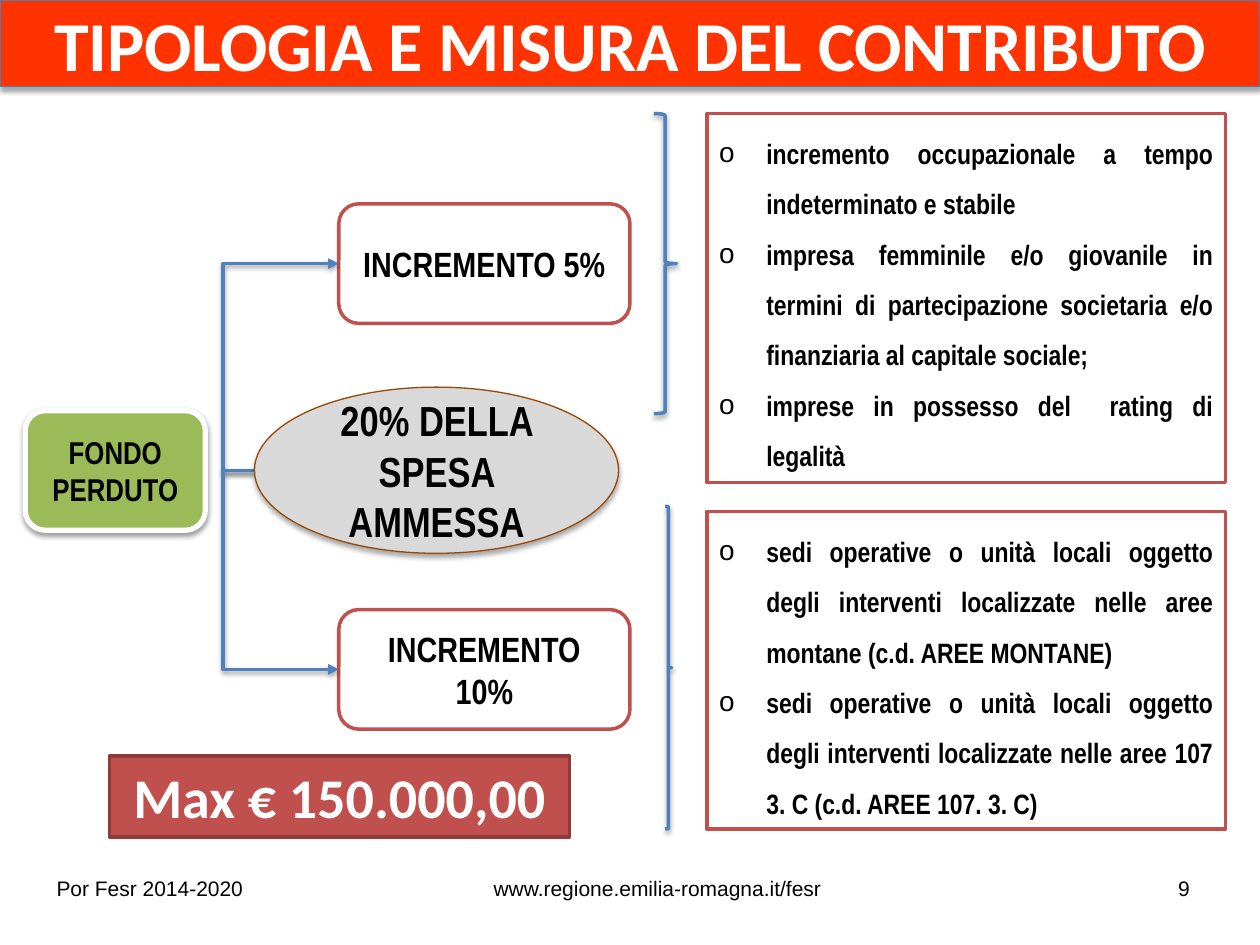
import pptx
import pptx.dml.color
import pptx.enum.shapes
import pptx.enum.text
import pptx.oxml.ns
import pptx.util
from lxml import etree

Cm = pptx.util.Cm
Pt = pptx.util.Pt
SHAPE = pptx.enum.shapes.MSO_SHAPE
ALIGN = pptx.enum.text.PP_ALIGN
ANCHOR = pptx.enum.text.MSO_ANCHOR
qn = pptx.oxml.ns.qn

COLOURS = {
    "banner": "FF3300", "banner_edge": "4B7EBC", "white": "FFFFFF",
    "black": "000000", "green": "9BBB59", "red": "C0504D",
    "dark_red": "8E3B39", "blue": "4F81BD", "grey": "D9D9D9",
    "brown": "984807",
}
INCREASES = ["INCREMENTO 5%", "INCREMENTO 10%"]
GROWTH_CRITERIA = [
    "incremento occupazionale a tempo indeterminato e stabile",
    "impresa femminile e/o giovanile in termini di partecipazione societaria "
    "e/o finanziaria al capitale sociale;",
    "imprese in possesso del  rating di legalità",
]
AREA_CRITERIA = [
    "sedi operative o unità locali oggetto degli interventi localizzate "
    "nelle aree montane (c.d. AREE MONTANE)",
    "sedi operative o unità locali oggetto degli interventi localizzate "
    "nelle aree 107 3. C (c.d. AREE 107. 3. C)",
]


def colour(name):
    """Return the named palette colour."""
    return pptx.dml.color.RGBColor.from_string(COLOURS[name])


def outline(item, name, width):
    """Set the line colour and width of a shape or connector."""
    item.line.color.rgb = colour(name)
    item.line.width = Pt(width)


def cast_shadow(item, alpha=38, distance=1.6):
    """Give a shape or connector a soft shadow straight below it."""
    properties = item._element.spPr
    effects = properties.find(qn("a:effectLst"))
    if effects is None:
        effects = etree.SubElement(properties, qn("a:effectLst"))
    shadow = etree.SubElement(
        effects, qn("a:outerShdw"), blurRad=str(Pt(3.1)),
        dist=str(Pt(distance)), dir="5400000", rotWithShape="0")
    tint = etree.SubElement(shadow, qn("a:srgbClr"), val=COLOURS["black"])
    etree.SubElement(tint, qn("a:alpha"), val=str(alpha * 1000))


def write(paragraph, text, font, size, ink="black", bold=True, align=ALIGN.CENTER):
    """Add one formatted run to a paragraph."""
    paragraph.alignment = align
    run = paragraph.add_run()
    run.text = text
    run.font.name = font
    run.font.size = Pt(size)
    run.font.bold = bold
    run.font.color.rgb = colour(ink)


def add_box(slide, kind, box, fill, edge, width):
    """Add a preset shape with its fill and outline, without a shadow."""
    shape = slide.shapes.add_shape(kind, *map(Cm, box))
    if fill:
        shape.fill.solid()
        shape.fill.fore_color.rgb = colour(fill)
    else:
        shape.fill.background()
    outline(shape, edge, width)
    shape.shadow.inherit = False
    return shape


def place_title(slide, box):
    """Turn the title placeholder into the banner."""
    title = slide.shapes.title
    title.left, title.top, title.width, title.height = map(Cm, box)
    title.fill.solid()
    title.fill.fore_color.rgb = colour("banner")
    outline(title, "banner_edge", 0.75)
    title.shadow.inherit = False
    cast_shadow(title, 35, 1.8)
    frame = title.text_frame
    frame.auto_size = pptx.enum.text.MSO_AUTO_SIZE.NONE
    frame.vertical_anchor = ANCHOR.MIDDLE
    write(frame.paragraphs[0], "TIPOLOGIA E MISURA DEL CONTRIBUTO",
          "Calibri", 40, "white")


def place_branch(slide, start, end, trunk):
    """Draw an elbow arrow that turns at the trunk's horizontal position."""
    arrow = slide.shapes.add_connector(
        pptx.enum.shapes.MSO_CONNECTOR.ELBOW, *map(Cm, start + end))
    outline(arrow, "blue", 2)
    etree.SubElement(arrow.line._get_or_add_ln(), qn("a:tailEnd"), type="triangle")
    turn = round((trunk - start[0]) / (end[0] - start[0]) * 100000)
    guides = arrow._element.spPr.find(qn("a:prstGeom")).find(qn("a:avLst"))
    etree.SubElement(guides, qn("a:gd"), name="adj1", fmla=f"val {turn}")
    cast_shadow(arrow)


def place_tree(slide, box):
    """Draw the grant, its base share and the two increases."""
    left, top, width, height = box
    node_height = 2.41
    middle = top + height / 2 + 0.08
    increase_left = left + 6.32
    ellipse_left = left + 4.62
    fund = add_box(slide, SHAPE.FLOWCHART_ALTERNATE_PROCESS,
                   (left, middle - node_height / 2, 3.63, node_height),
                   "green", "white", 3)
    cast_shadow(fund)
    write(fund.text_frame.paragraphs[0], "FONDO PERDUTO", "Arial Narrow", 18)
    for text, node_top in zip(INCREASES, (top, top + height - node_height)):
        node = add_box(slide, SHAPE.FLOWCHART_ALTERNATE_PROCESS,
                       (increase_left, node_top, left + width - increase_left,
                        node_height), "white", "red", 2)
        write(node.text_frame.paragraphs[0], text, "Arial Narrow", 20)
        place_branch(slide, (ellipse_left, middle),
                     (increase_left, node_top + node_height / 2), left + 3.99)
    share = add_box(slide, SHAPE.OVAL, (ellipse_left, middle - 1.68, 7.34, 3.35),
                    "grey", "brown", 0.75)
    cast_shadow(share, 35, 1.8)
    write(share.text_frame.paragraphs[0], "20% DELLA SPESA AMMESSA",
          "Arial Narrow", 24)


def place_criteria(slide, box, criteria):
    """Draw a framed bullet list."""
    panel = add_box(slide, SHAPE.RECTANGLE, box, "white", "red", 2)
    frame = panel.text_frame
    frame.vertical_anchor = ANCHOR.TOP
    for index, criterion in enumerate(criteria):
        paragraph = frame.paragraphs[0] if index == 0 else frame.add_paragraph()
        paragraph.line_spacing = 1.5
        properties = paragraph._p.get_or_add_pPr()
        properties.set("marL", str(Cm(0.95)))
        properties.set("indent", str(Cm(-0.95)))
        etree.SubElement(properties, qn("a:buFont"), typeface="Arial")
        etree.SubElement(properties, qn("a:buChar"), char="o")
        write(paragraph, criterion, "Arial Narrow", 16, align=ALIGN.JUSTIFY)


def place_brace(slide, box):
    """Draw a closing brace."""
    cast_shadow(add_box(slide, SHAPE.RIGHT_BRACE, box, None, "blue", 2))


def place_maximum(slide, box):
    """Draw the maximum amount."""
    maximum = add_box(slide, SHAPE.RECTANGLE, box, "red", "dark_red", 2)
    maximum.text_frame.vertical_anchor = ANCHOR.TOP
    write(maximum.text_frame.paragraphs[0], "Max € 150.000,00",
          "Calibri", 32, "white")


def place_footer(slide, box):
    """Write the programme, web address and slide number."""
    left, top, width, height = box
    entries = [("Por Fesr 2014-2020", 0, 4.32),
               ("www.regione.emilia-romagna.it/fesr", 8.81, 7.19),
               ("9", width - 1.14, 1.14)]
    for text, offset, entry_width in entries:
        entry = slide.shapes.add_textbox(
            *map(Cm, (left + offset, top, entry_width, height)))
        entry.text_frame.word_wrap = False
        write(entry.text_frame.paragraphs[0], text, "Arial", 12,
              bold=False, align=ALIGN.LEFT)


def main():
    """Build and save the slide."""
    deck = pptx.Presentation()
    deck.slide_width, deck.slide_height = Cm(25.4), Cm(19.05)
    slide = deck.slides.add_slide(deck.slide_layouts.get_by_name("Title Only"))
    place_footer(slide, (0.89, 17.53, 23.75, 0.76))
    place_title(slide, (0, 0, 25.4, 1.75))
    place_criteria(slide, (14.25, 2.29, 10.46, 7.44), GROWTH_CRITERIA)
    place_criteria(slide, (14.25, 10.31, 10.46, 6.4), AREA_CRITERIA)
    place_brace(slide, (13.18, 2.29, 0.46, 6.05))
    place_brace(slide, (13.41, 10.21, 0.13, 6.5))
    place_tree(slide, (0.51, 4.11, 12.19, 10.59))
    place_maximum(slide, (2.21, 15.24, 9.27, 1.63))
    deck.save("out.pptx")


if __name__ == "__main__":
    main()
